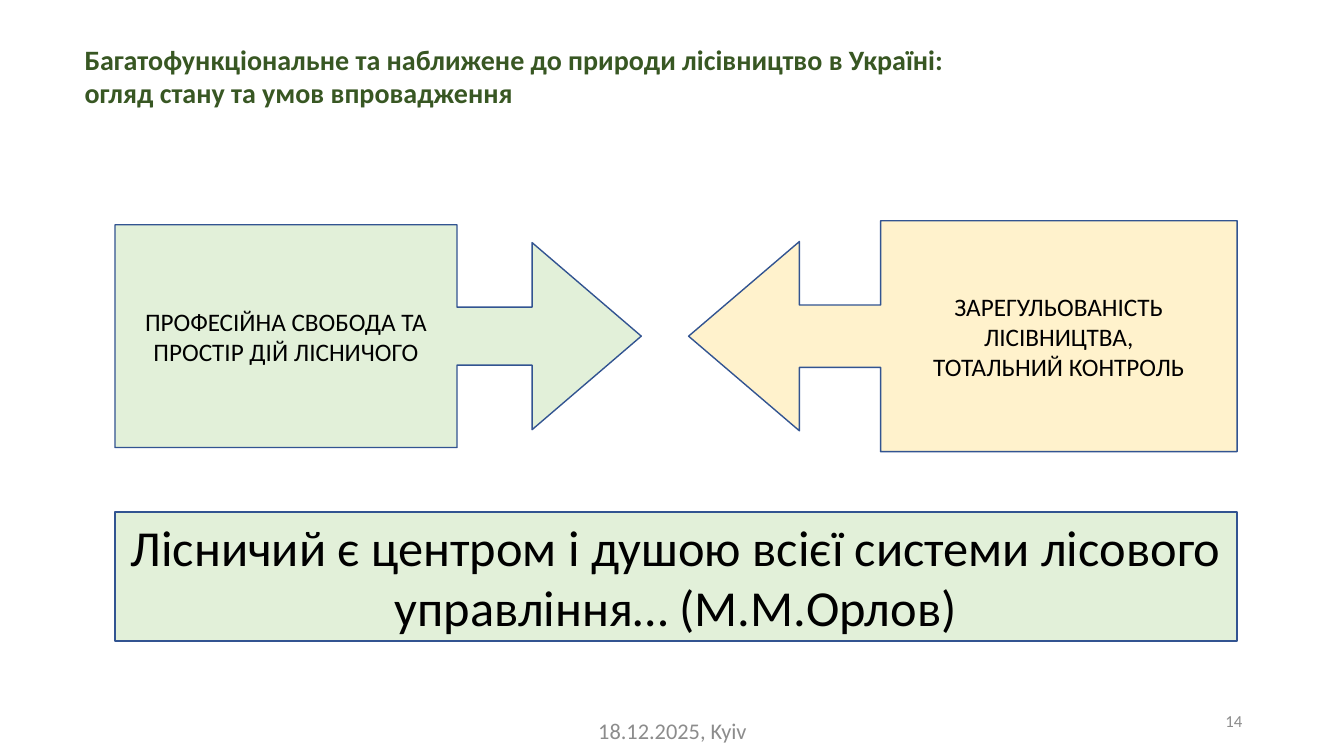
from dataclasses import dataclass

import pptx
import pptx.dml.color
import pptx.enum.shapes
import pptx.enum.text
import pptx.util

Inches = pptx.util.Inches
Align = pptx.enum.text.PP_ALIGN
Anchor = pptx.enum.text.MSO_ANCHOR
Preset = pptx.enum.shapes.MSO_SHAPE


@dataclass(frozen=True)
class Theme:
    font: str = "Calibri"
    heading: str = "385723"
    body: str = "000000"
    muted: str = "8C8C8C"
    outline: str = "325491"
    green: str = "E2F0D9"
    yellow: str = "FFF2CC"
    outline_width: float = 1
    quote_size: float = 36
    heading_size: float = 20
    callout_size: float = 18
    footer_size: float = 16
    number_size: float = 12


THEME = Theme()


@dataclass(frozen=True)
class Box:
    left: float
    top: float
    width: float
    height: float

    def lengths(self) -> list[pptx.util.Length]:
        return [Inches(n) for n in (self.left, self.top, self.width, self.height)]


@dataclass(frozen=True)
class Wording:
    lines: tuple[str, ...]
    size: float
    color: str = THEME.body
    align: Align = Align.CENTER
    anchor: Anchor = Anchor.MIDDLE
    bold: bool = False


@dataclass(frozen=True)
class Panel:
    box: Box
    preset: Preset
    fill: str
    wording: Wording
    adjustments: tuple[float, ...] = ()


@dataclass(frozen=True)
class Label:
    box: Box
    wording: Wording


def rgb(color: str) -> pptx.dml.color.RGBColor:
    return pptx.dml.color.RGBColor.from_string(color)


def write(frame: pptx.text.text.TextFrame, wording: Wording) -> None:
    frame.word_wrap = True
    frame.vertical_anchor = wording.anchor
    for index, line in enumerate(wording.lines):
        paragraph = frame.add_paragraph() if index else frame.paragraphs[0]
        paragraph.alignment = wording.align
        run = paragraph.add_run()
        run.text = line
        run.font.name = THEME.font
        run.font.size = pptx.util.Pt(wording.size)
        run.font.bold = wording.bold
        run.font.color.rgb = rgb(wording.color)


def draw_panel(slide: pptx.slide.Slide, panel: Panel) -> None:
    shape = slide.shapes.add_shape(panel.preset, *panel.box.lengths())
    shape.shadow.inherit = False
    for index, value in enumerate(panel.adjustments):
        shape.adjustments[index] = value
    shape.fill.solid()
    shape.fill.fore_color.rgb = rgb(panel.fill)
    shape.line.color.rgb = rgb(THEME.outline)
    shape.line.width = pptx.util.Pt(THEME.outline_width)
    write(shape.text_frame, panel.wording)


def draw_label(slide: pptx.slide.Slide, label: Label) -> None:
    write(slide.shapes.add_textbox(*label.box.lengths()).text_frame, label.wording)


PANELS = (
    Panel(
        Box(1.14, 5.08, 11.13, 1.28), Preset.RECTANGLE, THEME.green,
        Wording(
            ("Лісничий є центром і душою всієї системи лісового управління… (М.М.Орлов)",),
            THEME.quote_size,
        ),
    ),
    Panel(
        Box(1.14, 2.23, 5.22, 2.21), Preset.RIGHT_ARROW_CALLOUT, THEME.green,
        Wording(("ПРОФЕСІЙНА СВОБОДА ТА ПРОСТІР ДІЙ ЛІСНИЧОГО",), THEME.callout_size),
        (0.26, 0.42, 0.49, 0.65),
    ),
    Panel(
        Box(6.83, 2.19, 5.44, 2.29), Preset.LEFT_ARROW_CALLOUT, THEME.yellow,
        Wording(
            ("ЗАРЕГУЛЬОВАНІСТЬ ЛІСІВНИЦТВА,", "ТОТАЛЬНИЙ КОНТРОЛЬ"),
            THEME.callout_size,
        ),
        (0.27, 0.41, 0.48, 0.65),
    ),
)

LABELS = (
    Label(
        Box(0.74, 0.37, 9.26, 0.77),
        Wording(
            ("Багатофункціональне та наближене до природи лісівництво в Україні: "
             "огляд стану та умов впровадження",),
            THEME.heading_size, THEME.heading, Align.LEFT, Anchor.TOP, True,
        ),
    ),
    Label(
        Box(4.42, 6.95, 4.5, 0.6),
        Wording(("18.12.2025, Kyiv",), THEME.footer_size, THEME.muted),
    ),
    Label(
        Box(9.42, 6.95, 3, 0.4),
        Wording(("14",), THEME.number_size, THEME.muted, Align.RIGHT),
    ),
)


def main() -> None:
    deck = pptx.Presentation()
    deck.slide_width = Inches(13.33)
    deck.slide_height = Inches(7.5)
    slide = deck.slides.add_slide(deck.slide_layouts[6])
    for panel in PANELS:
        draw_panel(slide, panel)
    for label in LABELS:
        draw_label(slide, label)
    deck.save("out.pptx")


if __name__ == "__main__":
    main()
